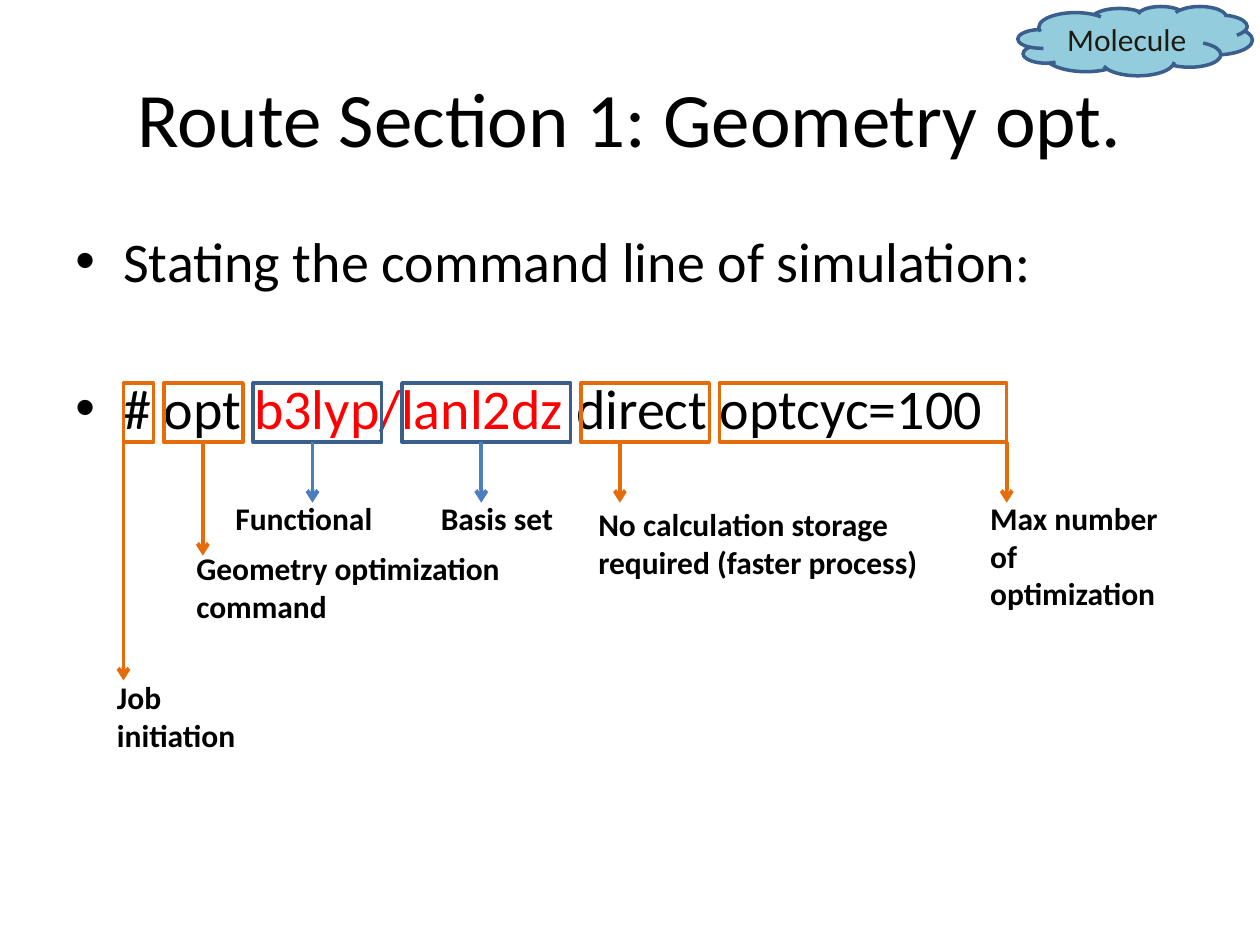
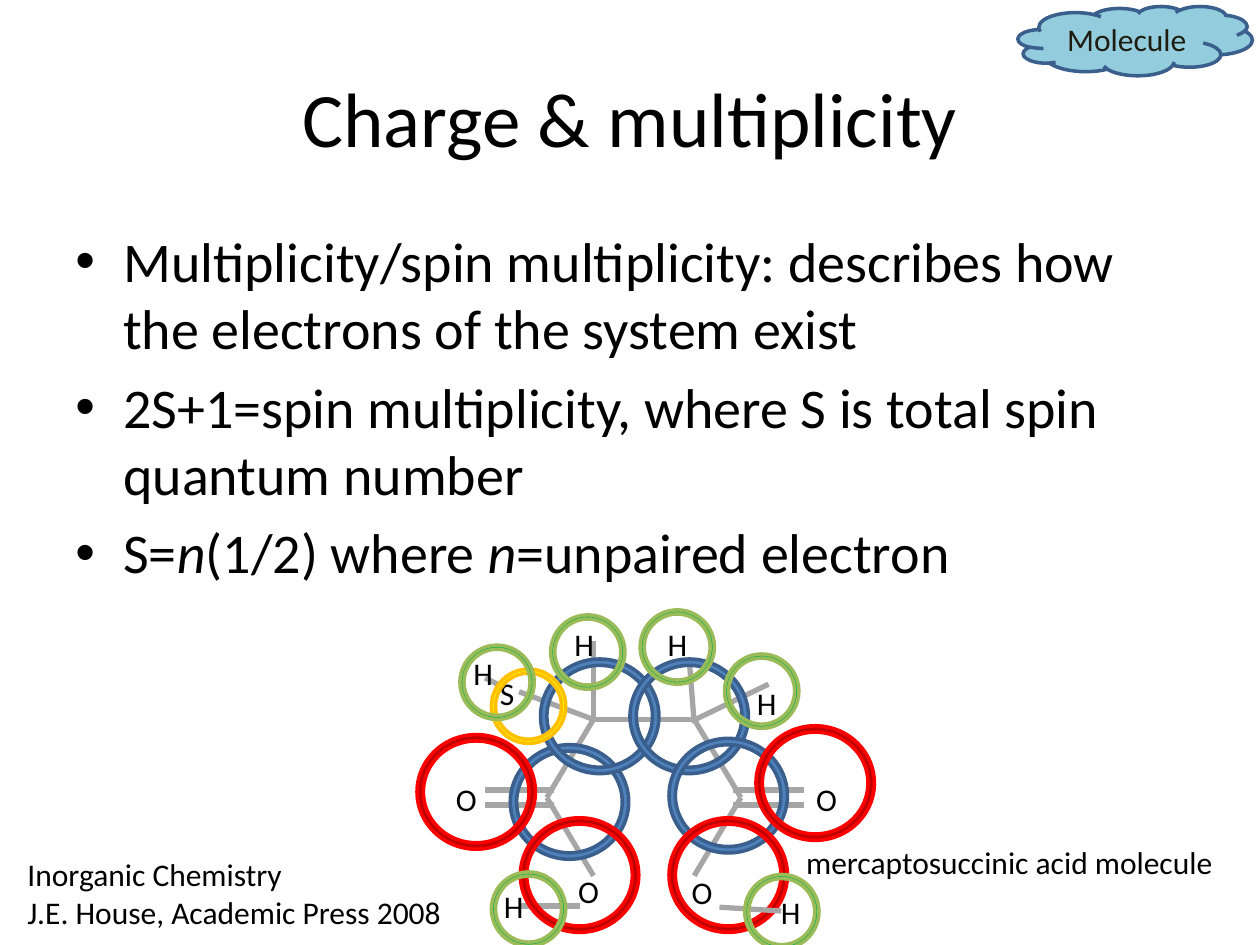
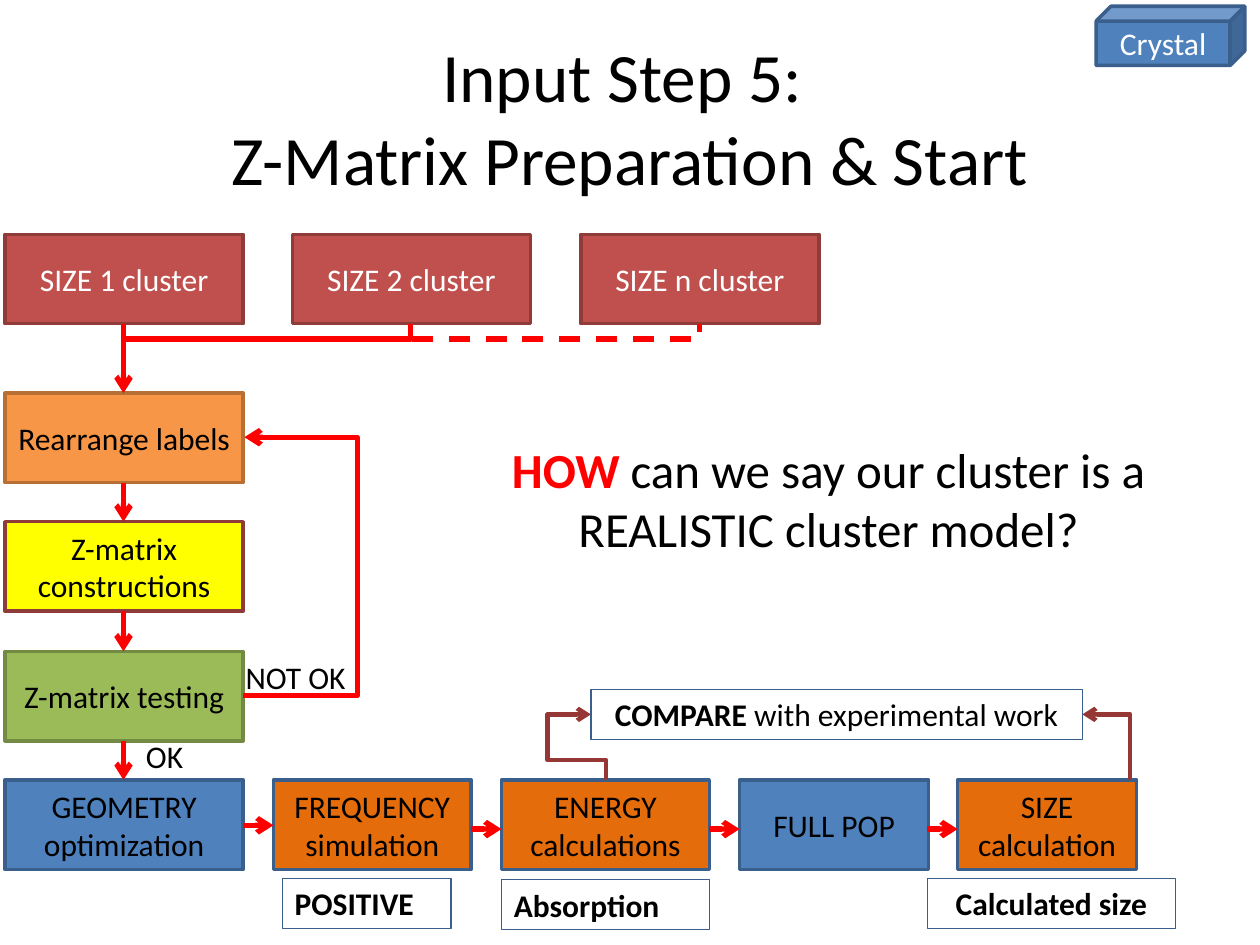
from dataclasses import dataclass
from typing import Any

from lxml.etree import SubElement
from pptx import Presentation
from pptx.dml.color import RGBColor
from pptx.enum.dml import MSO_LINE
from pptx.enum.shapes import MSO_CONNECTOR, MSO_SHAPE
from pptx.enum.text import MSO_ANCHOR, PP_ALIGN
from pptx.oxml.ns import qn
from pptx.util import Inches, Pt

BLACK = RGBColor(0x00, 0x00, 0x00)
WHITE = RGBColor(0xFF, 0xFF, 0xFF)
RED = RGBColor(0xFF, 0x00, 0x00)
DARK_RED = RGBColor(0xC0, 0x00, 0x00)
BRICK = RGBColor(0xC0, 0x50, 0x4D)
BRICK_EDGE = RGBColor(0x8E, 0x3B, 0x39)
MAROON = RGBColor(0x95, 0x37, 0x35)
ORANGE = RGBColor(0xE4, 0x6C, 0x0A)
LIGHT_ORANGE = RGBColor(0xF7, 0x96, 0x46)
ORANGE_EDGE = RGBColor(0xB7, 0x6F, 0x34)
YELLOW = RGBColor(0xFF, 0xFF, 0x00)
GOLD = RGBColor(0xFF, 0xC0, 0x00)
GREEN = RGBColor(0x00, 0xB0, 0x50)
OLIVE = RGBColor(0x9B, 0xBB, 0x59)
OLIVE_EDGE = RGBColor(0x73, 0x8A, 0x42)
BLUE = RGBColor(0x4F, 0x81, 0xBD)
BLUE_EDGE = RGBColor(0x3A, 0x5F, 0x8C)
BLUE_ARROW = RGBColor(0x4B, 0x7E, 0xBC)
AQUA = RGBColor(0x93, 0xCD, 0xDD)
INK = RGBColor(0x1E, 0x1C, 0x11)
GREY = RGBColor(0xA6, 0xA6, 0xA6)

FONT = "Calibri"
BODY_GAP = 6.4
BLANK_LINE = 39
LABEL_HEIGHT = 0.4


@dataclass(frozen=True)
class Span:
    text: str
    color: RGBColor | None = None
    bold: bool | None = None
    italic: bool = False


@dataclass(frozen=True)
class TextStyle:
    size: float = 18
    color: RGBColor = BLACK
    bold: bool = False
    align: PP_ALIGN = PP_ALIGN.LEFT
    anchor: MSO_ANCHOR = MSO_ANCHOR.TOP
    wrap: bool = True
    bullet: bool = False
    gaps: tuple[float, ...] = ()


@dataclass(frozen=True)
class Box:
    left: float
    top: float
    width: float
    height: float

    def lengths(self) -> list[int]:
        return [Inches(value) for value in (self.left, self.top, self.width, self.height)]


@dataclass(frozen=True)
class Look:
    fill: RGBColor | None
    edge: RGBColor
    weight: float = 2


@dataclass(frozen=True)
class Stroke:
    color: RGBColor
    weight: float = 3
    arrow: bool = False
    dash: bool = False


@dataclass(frozen=True)
class Elbow:
    box: Box
    stroke: Stroke
    preset: str = "bentConnector2"
    rotation: int = 0
    bends: tuple[int, ...] = ()


@dataclass(frozen=True)
class Ring:
    left: float
    top: float
    look: Look
    width: float = 0.94
    height: float = 0.91


LABEL = TextStyle()
BOLD_LABEL = TextStyle(bold=True)
BOLD_CENTRE = TextStyle(bold=True, align=PP_ALIGN.CENTER)
SHAPE_TEXT = TextStyle(align=PP_ALIGN.CENTER, anchor=MSO_ANCHOR.MIDDLE)
LIGHT_TEXT = TextStyle(color=WHITE, align=PP_ALIGN.CENTER, anchor=MSO_ANCHOR.MIDDLE)

BLUE_LOOK = Look(BLUE, BLUE_EDGE)
BRICK_LOOK = Look(BRICK, BRICK_EDGE)
ORANGE_LOOK = Look(ORANGE, BLUE_EDGE)
ORANGE_FRAME = Look(None, ORANGE)
BLUE_FRAME = Look(None, BLUE_EDGE)
NOTE_FRAME = Look(None, BLUE_EDGE, 0.75)
OXYGEN = Look(DARK_RED, RED)
HYDROGEN = Look(GREEN, OLIVE)
SULFUR = Look(YELLOW, GOLD)

BOND = Stroke(GREY)
RED_LINE = Stroke(RED)
RED_ARROW = Stroke(RED, arrow=True)
MAROON_ARROW = Stroke(MAROON, 2.5, arrow=True)


def apply(target: Any, values: dict[str, Any]) -> None:
    for name, value in values.items():
        setattr(target, name, value)


def add_bullet(paragraph: Any) -> None:
    properties = paragraph._p.get_or_add_pPr()
    apply_attributes = {"marL": Inches(0.38), "indent": -Inches(0.38)}
    for name, value in apply_attributes.items():
        properties.set(name, str(value))
    SubElement(properties, qn("a:buFont")).set("typeface", "Arial")
    SubElement(properties, qn("a:buChar")).set("char", "•")


def write(shape: Any, lines: list[list[Span]], style: TextStyle) -> None:
    frame = shape.text_frame
    apply(frame, {"word_wrap": style.wrap, "vertical_anchor": style.anchor})
    for index, spans in enumerate(lines):
        paragraph = frame.add_paragraph() if index else frame.paragraphs[0]
        if style.bullet:
            add_bullet(paragraph)
        paragraph.alignment = style.align
        if index and style.gaps:
            paragraph.space_before = Pt(style.gaps[index - 1])
        for span in spans:
            run = paragraph.add_run()
            run.text = span.text
            bold = style.bold if span.bold is None else span.bold
            apply(run.font, {"name": FONT, "size": Pt(style.size), "bold": bold, "italic": span.italic})
            run.font.color.rgb = span.color or style.color


def plain(text: str) -> list[list[Span]]:
    return [[Span(line)] for line in text.split("\n")]


def add_text(slide: Any, box: Box, lines: list[list[Span]], style: TextStyle = LABEL) -> None:
    write(slide.shapes.add_textbox(*box.lengths()), lines, style)


def add_shape(slide: Any, kind: MSO_SHAPE, box: Box, look: Look,
              lines: list[list[Span]] | None = None, style: TextStyle = SHAPE_TEXT) -> Any:
    shape = slide.shapes.add_shape(kind, *box.lengths())
    shape.shadow.inherit = False
    if look.fill is None:
        shape.fill.background()
    else:
        shape.fill.solid()
        shape.fill.fore_color.rgb = look.fill
    shape.line.color.rgb = look.edge
    shape.line.width = Pt(look.weight)
    if lines:
        write(shape, lines, style)
    return shape


def add_line(slide: Any, start: tuple[float, float], end: tuple[float, float], stroke: Stroke) -> Any:
    points = [Inches(value) for value in (*start, *end)]
    connector = slide.shapes.add_connector(MSO_CONNECTOR.STRAIGHT, *points)
    line = connector.line
    line.color.rgb = stroke.color
    line.width = Pt(stroke.weight)
    if stroke.dash:
        line.dash_style = MSO_LINE.DASH
    if stroke.arrow:
        SubElement(line._get_or_add_ln(), qn("a:tailEnd")).set("type", "arrow")
    SubElement(connector._element.spPr, qn("a:effectLst"))
    return connector


def add_elbow(slide: Any, elbow: Elbow) -> None:
    box = elbow.box
    start, end = (box.left, box.top + box.height), (box.left + box.width, box.top)
    properties = add_line(slide, start, end, elbow.stroke)._element.spPr
    properties.find(qn("a:xfrm")).set("rot", str(elbow.rotation * 60000))
    geometry = properties.find(qn("a:prstGeom"))
    geometry.set("prst", elbow.preset)
    guides = geometry.find(qn("a:avLst"))
    if guides is None:
        guides = SubElement(geometry, qn("a:avLst"))
    for number, bend in enumerate(elbow.bends, 1):
        guide = SubElement(guides, qn("a:gd"))
        guide.set("name", f"adj{number}")
        guide.set("fmla", f"val {bend}")


def add_ring(slide: Any, ring: Ring) -> None:
    box = Box(ring.left, ring.top, ring.width, ring.height)
    add_shape(slide, MSO_SHAPE.DONUT, box, ring.look).adjustments[0] = 0.056


def add_title(slide: Any, text: str, size: float = 44) -> None:
    style = TextStyle(size=size, align=PP_ALIGN.CENTER, anchor=MSO_ANCHOR.MIDDLE)
    add_text(slide, Box(0.5, 0.3, 9, 1.25), plain(text), style)


def add_body(slide: Any, lines: list[list[Span]], gaps: tuple[float, ...]) -> None:
    add_text(slide, Box(0.5, 1.75, 9, 4.95), lines, TextStyle(size=32, bullet=True, gaps=gaps))


def add_molecule_tag(slide: Any) -> None:
    style = TextStyle(color=INK, align=PP_ALIGN.CENTER, anchor=MSO_ANCHOR.MIDDLE)
    add_shape(slide, MSO_SHAPE.CLOUD, Box(8.08, 0.05, 1.86, 0.55), Look(AQUA, BLUE_EDGE),
              plain("Molecule"), style)


def build_route(slide: Any) -> None:
    add_title(slide, "Route Section 1: Geometry opt.")
    add_body(slide, [
        [Span("Stating the command line of simulation:")],
        [Span("# opt "), Span("b3lyp/lanl2dz", RED), Span(" direct optcyc=100")],
    ], (BODY_GAP + BLANK_LINE,))
    keywords = [
        (0.98, 0.24, ORANGE_FRAME), (1.3, 0.63, ORANGE_FRAME), (2.01, 1.02, BLUE_FRAME),
        (3.19, 1.34, BLUE_FRAME), (4.61, 1.02, ORANGE_FRAME), (5.71, 2.28, ORANGE_FRAME),
    ]
    for left, width, look in keywords:
        add_shape(slide, MSO_SHAPE.RECTANGLE, Box(left, 3.04, width, 0.47), look)
    arrows = [
        (0.98, 5.4, ORANGE), (1.61, 4.41, ORANGE), (2.48, 3.99, BLUE_ARROW),
        (3.82, 3.99, BLUE_ARROW), (4.92, 3.99, ORANGE), (7.99, 3.99, ORANGE),
    ]
    for x, bottom, color in arrows:
        add_line(slide, (x, 3.51), (x, bottom), Stroke(color, 2.25, arrow=True))
    meanings = [
        ("Job initiation", Box(0.83, 5.33, 1.42, 0.71)),
        ("Geometry optimization command", Box(1.46, 4.31, 2.76, 0.71)),
        ("Functional", Box(1.77, 3.91, 1.42, LABEL_HEIGHT)),
        ("Basis set", Box(3.4, 3.91, 1.42, LABEL_HEIGHT)),
        ("No calculation storage required (faster process)", Box(4.65, 3.96, 2.87, 0.71)),
        ("Max number of optimization", Box(7.76, 3.91, 1.57, 1.01)),
    ]
    for text, box in meanings:
        add_text(slide, box, plain(text), BOLD_LABEL)
    add_molecule_tag(slide)


def build_charge(slide: Any) -> None:
    add_title(slide, "Charge & multiplicity")
    add_body(slide, [
        [Span("Multiplicity/spin multiplicity: describes how the electrons of the system exist")],
        [Span("2S+1=spin multiplicity, where S is total spin quantum number")],
        [Span("S="), Span("n", italic=True), Span("(1/2) where "), Span("n", italic=True),
         Span("=unpaired electron")],
    ], (BODY_GAP, BODY_GAP))
    bonds = [
        ((6.1, 5.43), (5.52, 5.71)), ((4.71, 5.71), (4.34, 6.33)), ((5.51, 5.71), (4.71, 5.71)),
        ((4.34, 6.33), (4.71, 6.95)), ((5.88, 6.33), (5.51, 5.71)), ((5.51, 6.95), (5.88, 6.33)),
        ((4.71, 5.71), (4.12, 5.49)), ((4.12, 7.19), (4.6, 7.19)), ((5.51, 5.74), (5.47, 5.23)),
        ((4.71, 5.09), (4.71, 5.71)), ((3.95, 5.43), (3.85, 5.38)),
    ]
    double_bonds = [((right, y), (left, y)) for right, left in ((6.38, 5.82), (4.4, 3.85))
                    for y in (6.27, 6.39)]
    for start, end in bonds + double_bonds:
        add_line(slide, start, end, BOND)
    atoms = [
        ("O", 5.39, 6.88), ("O", 4.49, 6.87), ("O", 6.38, 6.14), ("O", 3.52, 6.14),
        ("S", 3.87, 5.3), ("H", 3.9, 6.99), ("H", 6.1, 7.04), ("H", 5.2, 4.91),
        ("H", 5.91, 5.38), ("H", 4.46, 4.91), ("H", 3.66, 5.14),
    ]
    for symbol, left, top in atoms:
        add_text(slide, Box(left, top, 0.44, LABEL_HEIGHT), plain(symbol))
    carbons = [(4.05, 5.91), (4.29, 5.23), (5, 5.23), (5.31, 5.86)]
    for left, top in carbons:
        add_ring(slide, Ring(left, top, BLUE_LOOK))
    for left, top in ((4.13, 6.49), (5.31, 6.49)):
        add_ring(slide, Ring(left, top, OXYGEN))
    add_line(slide, (5.71, 7.2), (6.2, 7.23), BOND)
    for left, top in ((6, 5.76), (3.31, 5.83)):
        add_ring(slide, Ring(left, top, OXYGEN))
    small_rings = [
        (5.75, 5.19, HYDROGEN), (5.08, 4.84, HYDROGEN), (4.37, 4.88, HYDROGEN),
        (5.91, 6.94, HYDROGEN), (3.9, 6.92, HYDROGEN), (3.9, 5.31, SULFUR),
        (3.65, 5.12, HYDROGEN),
    ]
    for left, top, look in small_rings:
        add_ring(slide, Ring(left, top, look, 0.59, 0.59))
    add_text(slide, Box(0.12, 6.74, 3.53, 0.71),
             plain("Inorganic Chemistry\nJ.E. House, Academic Press 2008"))
    add_text(slide, Box(6.3, 6.64, 3.47, LABEL_HEIGHT), plain("mercaptosuccinic acid molecule"),
             TextStyle(wrap=False))
    add_molecule_tag(slide)


def build_workflow(slide: Any) -> None:
    add_title(slide, "Input Step 5: \nZ-Matrix Preparation & Start", 39.6)
    add_shape(slide, MSO_SHAPE.CUBE, Box(8.7, 0.05, 1.18, 0.47), BLUE_LOOK, plain("Crystal"), LIGHT_TEXT)
    for left, size in ((0.04, "1"), (2.32, "2"), (4.61, "n")):
        add_shape(slide, MSO_SHAPE.RECTANGLE, Box(left, 1.86, 1.89, 0.71), BRICK_LOOK,
                  plain(f"SIZE {size} cluster"), LIGHT_TEXT)
    steps = [
        ("Rearrange labels", 0.04, 3.12, 1.89, Look(LIGHT_ORANGE, ORANGE_EDGE)),
        ("Z-matrix constructions", 0.04, 4.14, 1.89, Look(YELLOW, BRICK_EDGE)),
        ("Z-matrix testing", 0.04, 5.17, 1.89, Look(OLIVE, OLIVE_EDGE)),
        ("GEOMETRY optimization", 0.04, 6.19, 1.89, BLUE_LOOK),
        ("FREQUENCY\nsimulation", 2.17, 6.19, 1.57, ORANGE_LOOK),
        ("ENERGY\ncalculations", 3.98, 6.19, 1.65, ORANGE_LOOK),
        ("FULL POP", 5.87, 6.19, 1.5, BLUE_LOOK),
        ("SIZE\ncalculation", 7.6, 6.19, 1.42, ORANGE_LOOK),
    ]
    for text, left, top, width, look in steps:
        add_shape(slide, MSO_SHAPE.RECTANGLE, Box(left, top, width, 0.71), look, plain(text))
    for top, bottom in ((2.57, 3.12), (3.83, 4.14), (4.85, 5.17), (5.88, 6.19)):
        add_line(slide, (0.98, top), (0.98, bottom), RED_ARROW)
    for left, y in ((1.93, 6.55), (3.74, 6.58), (5.63, 6.58), (7.36, 6.58)):
        add_line(slide, (left, y), (left + 0.24, y), RED_ARROW)
    elbows = [
        Elbow(Box(0.98, 2.57, 2.28, 0.12), RED_LINE),
        Elbow(Box(3.27, 2.57, 2.28, 0.12), Stroke(RED, dash=True)),
        Elbow(Box(1.93, 3.47, 0.01, 2.05), RED_ARROW, "bentConnector3", bends=(9200000,)),
        Elbow(Box(4.49, 5.87, 0.52, 0.12), MAROON_ARROW, "bentConnector4", 270, (30500, 387600)),
        Elbow(Box(8.52, 5.74, 0.52, 0.38), MAROON_ARROW, rotation=270),
    ]
    for elbow in elbows:
        add_elbow(slide, elbow)
    add_text(slide, Box(3.19, 3.44, 6.77, 1.04),
             [[Span("HOW ", RED, True), Span("can we say our cluster is a REALISTIC cluster model?")]],
             TextStyle(size=28, align=PP_ALIGN.CENTER))
    for text, left, top in (("NOT OK", 1.85, 5.17), ("OK", 1.06, 5.8)):
        add_text(slide, Box(left, top, 1.02, LABEL_HEIGHT), plain(text))
    notes = [
        (plain("POSITIVE"), 2.24, 6.97, 1.34, BOLD_LABEL),
        (plain("Absorption"), 3.98, 6.98, 1.65, BOLD_LABEL),
        (plain("Calculated size"), 7.36, 6.97, 1.97, BOLD_CENTRE),
        ([[Span("COMPARE "), Span("with experimental work", bold=False)]], 4.69, 5.47, 3.9, BOLD_CENTRE),
    ]
    for lines, left, top, width, style in notes:
        add_shape(slide, MSO_SHAPE.RECTANGLE, Box(left, top, width, LABEL_HEIGHT), NOTE_FRAME, lines, style)


def main() -> None:
    presentation = Presentation()
    apply(presentation, {"slide_width": Inches(10), "slide_height": Inches(7.5)})
    for build in (build_route, build_charge, build_workflow):
        build(presentation.slides.add_slide(presentation.slide_layouts[6]))
    presentation.save("out.pptx")


if __name__ == "__main__":
    main()
